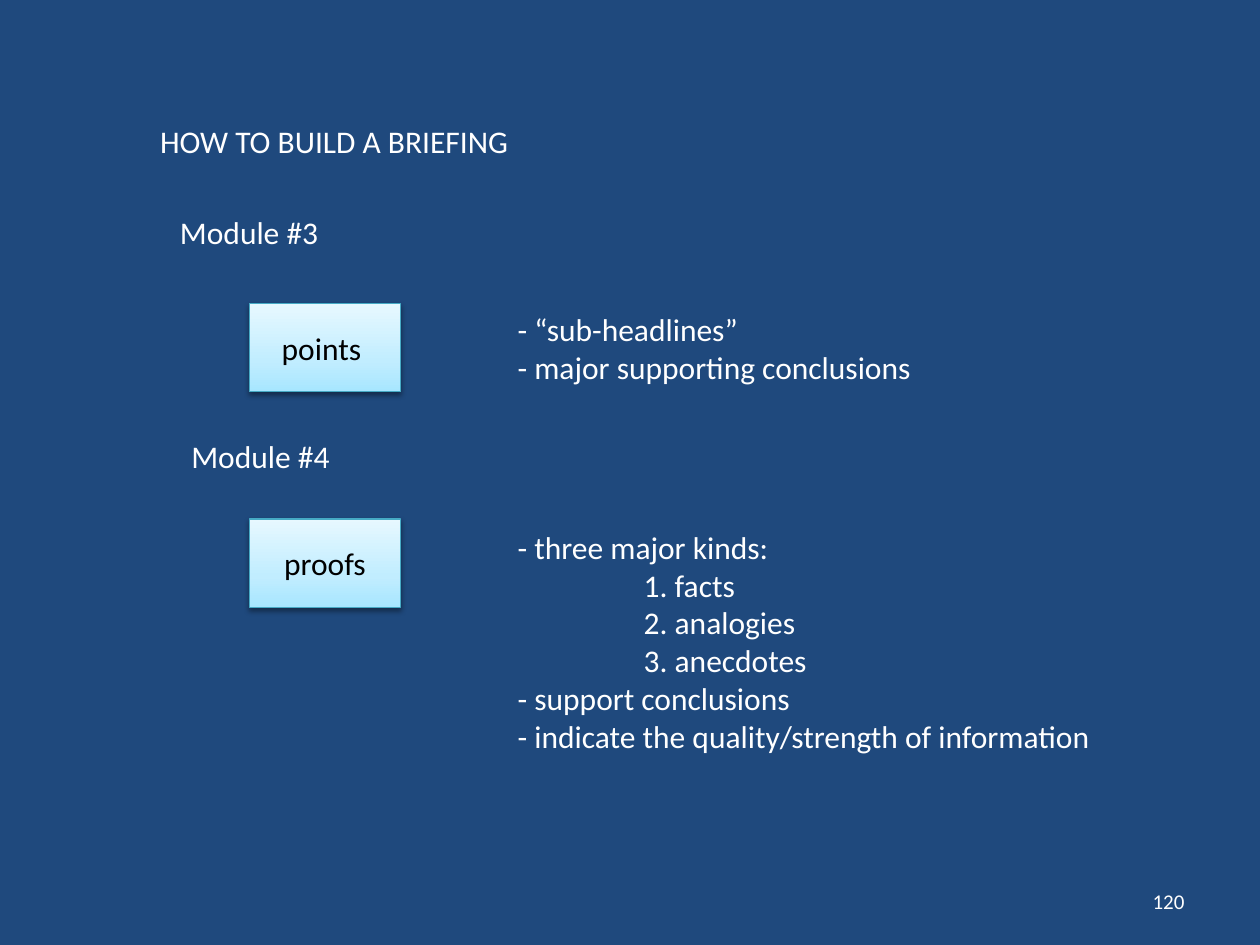
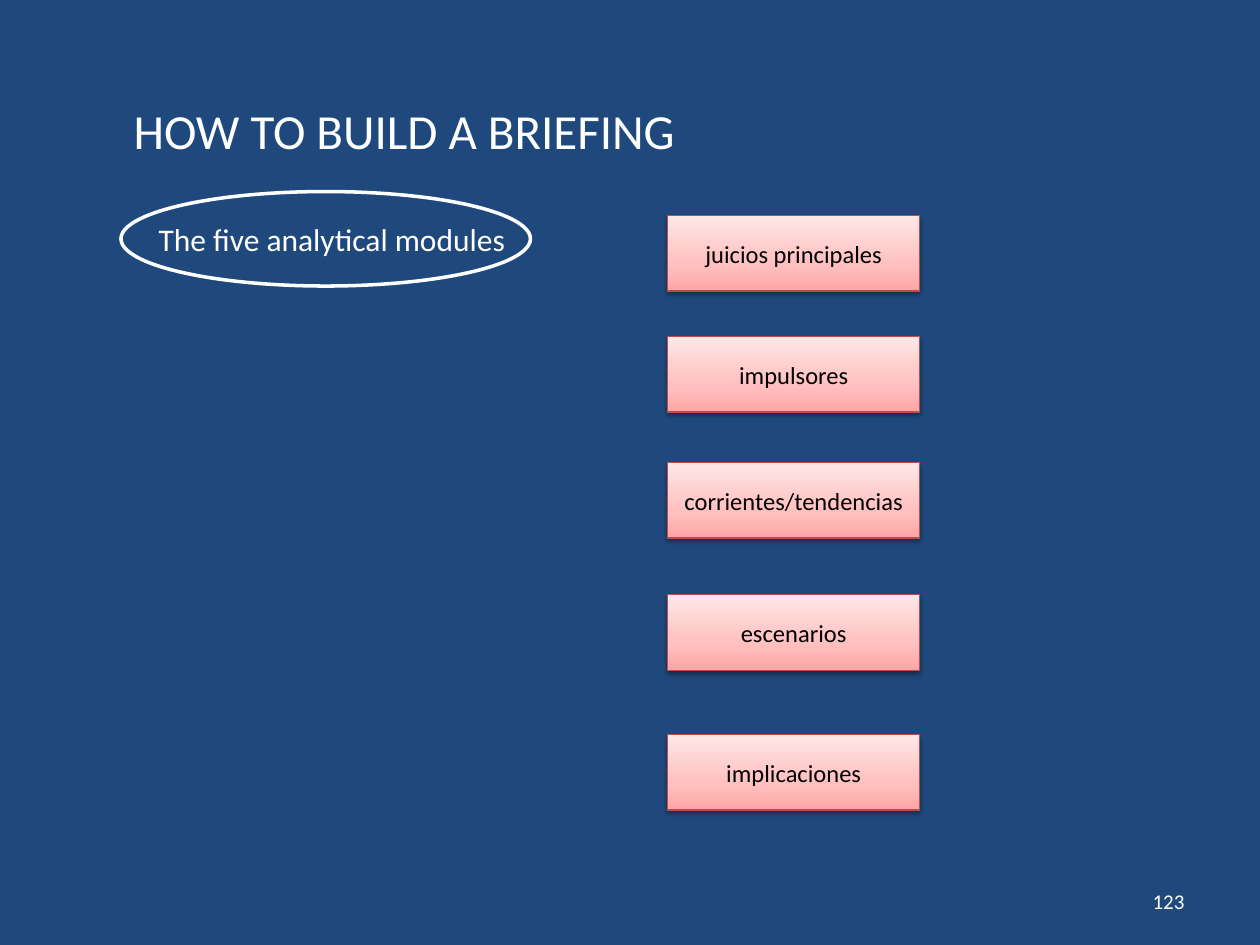
from lxml.etree import SubElement
from pptx import Presentation
from pptx.dml.color import RGBColor
from pptx.enum.shapes import MSO_SHAPE as Shape
from pptx.enum.text import MSO_ANCHOR as Anchor, MSO_AUTO_SIZE as AutoSize, PP_ALIGN as Align
from pptx.oxml import parse_xml
from pptx.oxml.ns import nsdecls, qn
from pptx.util import Inches, Pt

# Content: positions in inches, sizes in points
TITLE = "HOW TO BUILD A BRIEFING"
BRIEFING = {
    "number": "120",
    "title": ((1.17, 0.92, 6.25, 0.4), 18),
    "modules": [
        {"name": "Module #3", "name_at": (1.33, 1.64, 1.31, 0.4),
         "box": "points ", "top": 2.41, "notes_at": (4.01, 2.41, 3.36, 0.71),
         "notes": [(0, "- “sub-headlines”"), (0, "- major supporting conclusions")]},
        {"name": "Module #4", "name_at": (1.42, 3.42, 1.31, 0.4),
         "box": "proofs", "top": 4.12, "notes_at": (4.01, 4.14, 5.05, 1.92),
         "notes": [(0, "- three major kinds:"), (1, "1. facts"), (1, "2. analogies"),
                   (1, "3. anecdotes"), (0, "- support conclusions"),
                   (0, "- indicate the quality/strength of information")]},
    ],
}
ANALYSIS = {
    "number": "123",
    "title": ((0.96, 0.75, 6.25, 0.57), 28),
    "heading": "The five analytical modules",
    "heading_at": (1.16, 1.7, 2.99, 0.4),
    "ring_at": (0.96, 1.52, 3.25, 0.75),
    "modules": [("juicios principales", 1.71), ("impulsores", 2.67),
                ("corrientes/tendencias", 3.67), ("escenarios", 4.72),
                ("implicaciones", 5.83)],
}

# Shared look
FONT, NAVY, WHITE, BLACK = "Calibri", "1F497D", "FFFFFF", "000000"
BLUE_BOX = {"stops": [(0, "A7E6FF"), (35, "C1EDFF"), (100, "E7F8FF")], "line": "46AAC5", "size": 18}
RED_BOX = {"stops": [(0, "FFA6A5"), (35, "FFC0BF"), (100, "FFE7E7")], "line": "BF4C48", "size": 14}
NUMBER_AT = (7.17, 6.95, 2.33, 0.4)


def rgb(code):
    return RGBColor.from_string(code)


def inches(box):
    return [Inches(length) for length in box]


def write(frame, lines, size, color=WHITE, align=Align.LEFT, anchor=Anchor.TOP, wrap=True):
    """Fill a text frame with (indent in inches, text) lines."""
    frame_format = {"auto_size": AutoSize.NONE, "word_wrap": wrap, "vertical_anchor": anchor}
    for key, value in frame_format.items():
        setattr(frame, key, value)
    for index, (indent, text) in enumerate(lines):
        line = frame.add_paragraph() if index else frame.paragraphs[0]
        line.text, line.alignment = text, align
        if indent:
            line._p.get_or_add_pPr().set("marL", str(Inches(indent)))
        font = line.runs[0].font
        for key, value in {"name": FONT, "size": Pt(size)}.items():
            setattr(font, key, value)
        font.color.rgb = rgb(color)


def add_label(slide, box, lines, size=18, **layout):
    write(slide.shapes.add_textbox(*inches(box)).text_frame, lines, size, **layout)


def add_outline(slide, kind, box, color, width):
    outline = slide.shapes.add_shape(kind, *inches(box))
    outline.shadow.inherit = False
    outline.line.color.rgb = rgb(color)
    outline.line.width = Pt(width)
    return outline


def add_box(slide, box, text, look):
    """A bordered rectangle with an upward gradient and a soft shadow."""
    card = add_outline(slide, Shape.RECTANGLE, box, look["line"], 0.75)
    properties = card.element.spPr
    gradient = parse_xml(f'<a:gradFill {nsdecls("a")} rotWithShape="1"><a:gsLst/>'
                         '<a:lin ang="16200000" scaled="0"/></a:gradFill>')
    for position, color in look["stops"]:
        stop = SubElement(gradient[0], qn("a:gs"), pos=str(position * 1000))
        SubElement(stop, qn("a:srgbClr"), val=color)
    properties.find(qn("a:prstGeom")).addnext(gradient)
    properties.find(qn("a:effectLst")).append(parse_xml(
        f'<a:outerShdw {nsdecls("a")} blurRad="{Pt(3.1)}" dist="{Pt(1.6)}" dir="5400000" '
        f'rotWithShape="0"><a:srgbClr val="{BLACK}"><a:alpha val="38000"/></a:srgbClr></a:outerShdw>'))
    write(card.text_frame, [(0, text)], look["size"], BLACK, Align.CENTER, Anchor.MIDDLE)


def add_slide(deck, content):
    """A slide with the shared title and page number."""
    slide = deck.slides.add_slide(deck.slide_layouts[5])
    box, size = content["title"]
    title = slide.shapes.title
    for side, length in zip(("left", "top", "width", "height"), inches(box)):
        setattr(title, side, length)
    write(title.text_frame, [(0, TITLE)], size)
    add_label(slide, NUMBER_AT, [(0, content["number"])], 12,
              align=Align.RIGHT, anchor=Anchor.MIDDLE)
    return slide


def main():
    deck = Presentation()
    deck.slide_width, deck.slide_height = Inches(10), Inches(7.5)
    backdrop = deck.slide_master.background.fill
    backdrop.solid()
    backdrop.fore_color.rgb = rgb(NAVY)

    # Points and proofs
    slide = add_slide(deck, BRIEFING)
    for module in BRIEFING["modules"]:
        add_label(slide, module["name_at"], [(0, module["name"])], wrap=False)
        add_box(slide, (1.98, module["top"], 1.2, 0.7), module["box"], BLUE_BOX)
        add_label(slide, module["notes_at"], module["notes"])

    # Five analytical modules
    slide = add_slide(deck, ANALYSIS)
    for name, top in ANALYSIS["modules"]:
        add_box(slide, (5.3, top, 2, 0.6), name, RED_BOX)
    add_label(slide, ANALYSIS["heading_at"], [(0, ANALYSIS["heading"])], wrap=False)
    ring = add_outline(slide, Shape.OVAL, ANALYSIS["ring_at"], WHITE, 2)
    ring.fill.background()

    deck.save("out.pptx")


if __name__ == "__main__":
    main()
